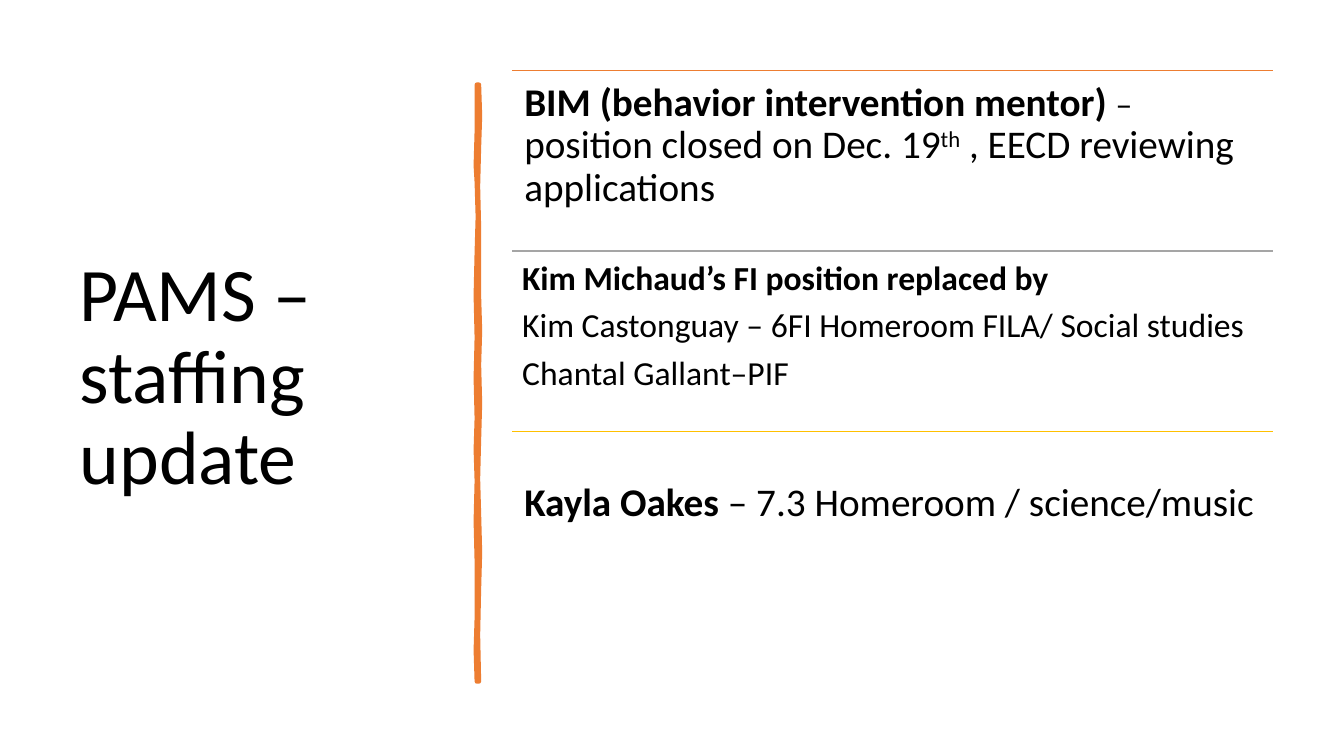
"""Build the PAMS staffing update slide."""
from dataclasses import dataclass

import lxml.etree
import pptx
import pptx.dml.color
import pptx.enum.shapes
import pptx.enum.text
import pptx.oxml.ns
import pptx.shapes.base
import pptx.slide
import pptx.text.text
import pptx.util

EMU_PER_PX = 9144
FONT = "Calibri"
BLACK = pptx.dml.color.RGBColor(0x00, 0x00, 0x00)
ORANGE = pptx.dml.color.RGBColor(0xED, 0x7D, 0x31)
GRAY = pptx.dml.color.RGBColor(0xA5, 0xA5, 0xA5)
GOLD = pptx.dml.color.RGBColor(0xFF, 0xC0, 0x00)

SECTION_LEFT, SECTION_TOP = 508, 70
SECTION_WIDTH, SECTION_HEIGHT = 755, 179

BRUSH_RIGHT = [
    (475, 84), (476, 115), (475, 146), (474, 185), (475, 226), (475, 260),
    (475, 294), (476, 328), (475, 362), (476, 400), (475, 436), (474, 475),
    (475, 510), (476, 548), (475, 584), (474, 630), (475, 676),
]
BRUSH_LEFT = [
    (473, 676), (472, 645), (473, 613), (473, 557), (472, 517), (473, 477),
    (472, 446), (473, 415), (472, 375), (473, 335), (472, 293), (473, 250),
    (474, 215), (473, 181), (472, 164), (473, 130), (473, 84),
]


@dataclass
class Segment:
    """A stretch of text in one style."""
    text: str
    size: int
    bold: bool = False
    superscript: bool = False


@dataclass
class Section:
    """A ruled block of staffing news."""
    rule_color: pptx.dml.color.RGBColor
    inset: int
    top_inset: int
    paragraphs: list[list[Segment]]


SECTIONS = [
    Section(ORANGE, 12, 12, [[
        Segment("BIM (behavior intervention mentor) ", 28, bold=True),
        Segment("– ", 24),
        Segment("position closed on Dec. 19", 28),
        Segment("th", 28, superscript=True),
        Segment(" , EECD reviewing applications", 28),
    ]]),
    Section(GRAY, 10, 10, [
        [Segment("Kim Michaud’s FI position replaced by", 24, bold=True)],
        [Segment("Kim Castonguay – 6FI Homeroom FILA/ Social studies", 24)],
        [Segment("Chantal Gallant–PIF", 24)],
    ]),
    Section(GOLD, 12, 71, [[
        Segment("Kayla Oakes ", 28, bold=True),
        Segment("– 7.3 Homeroom / science/music", 28),
    ]]),
]


def px(length: int) -> pptx.util.Emu:
    """Convert px to EMU."""
    return pptx.util.Emu(length * EMU_PER_PX)


def place(shape: pptx.shapes.base.BaseShape, left: int, top: int, width: int, height: int) -> None:
    """Set the position and size of a shape."""
    shape.left, shape.top = px(left), px(top)
    shape.width, shape.height = px(width), px(height)


def add_segment(paragraph: pptx.text.text._Paragraph, segment: Segment) -> None:
    """Append one styled run to a paragraph."""
    run = paragraph.add_run()
    run.text = segment.text
    run.font.name = FONT
    run.font.size = pptx.util.Pt(segment.size)
    run.font.bold = segment.bold
    run.font.color.rgb = BLACK
    if segment.superscript:
        run._r.get_or_add_rPr().set("baseline", "30000")


def add_title(slide: pptx.slide.Slide) -> None:
    """Fill the title placeholder."""
    title = slide.shapes.title
    place(title, 69, 70, 374, 611)
    frame = title.text_frame
    frame.word_wrap = True
    frame.auto_size = pptx.enum.text.MSO_AUTO_SIZE.NONE
    frame.vertical_anchor = pptx.enum.text.MSO_ANCHOR.MIDDLE
    paragraph = frame.paragraphs[0]
    paragraph.alignment = pptx.enum.text.PP_ALIGN.LEFT
    paragraph.line_spacing = 0.9
    add_segment(paragraph, Segment("PAMS – staffing update", 54))


def add_brush_line(slide: pptx.slide.Slide) -> None:
    """Draw the uneven vertical divider."""
    outline = BRUSH_RIGHT + BRUSH_LEFT
    builder = slide.shapes.build_freeform(*outline[0], scale=EMU_PER_PX)
    builder.add_line_segments(outline[1:], close=True)
    brush = builder.convert_to_shape()
    brush.shadow.inherit = False
    brush.fill.solid()
    brush.fill.fore_color.rgb = ORANGE
    brush.line.color.rgb = ORANGE
    brush.line.width = pptx.util.Pt(3.25)


def add_section(slide: pptx.slide.Slide, section: Section, top: int) -> None:
    """Draw the rule of a section and the text below it."""
    rule = slide.shapes.add_connector(
        pptx.enum.shapes.MSO_CONNECTOR.STRAIGHT,
        px(SECTION_LEFT), px(top), px(SECTION_LEFT + SECTION_WIDTH), px(top),
    )
    rule.line.color.rgb = section.rule_color
    rule.line.width = pptx.util.Pt(1)
    lxml.etree.SubElement(rule._element.spPr, pptx.oxml.ns.qn("a:effectLst"))

    box = slide.shapes.add_textbox(
        px(SECTION_LEFT), px(top), px(SECTION_WIDTH), px(SECTION_HEIGHT)
    )
    frame = box.text_frame
    frame.word_wrap = True
    frame.margin_left = frame.margin_right = frame.margin_bottom = px(section.inset)
    frame.margin_top = px(section.top_inset)
    for index, segments in enumerate(section.paragraphs):
        paragraph = frame.add_paragraph() if index else frame.paragraphs[0]
        paragraph.line_spacing = 0.9
        paragraph.space_after = pptx.util.Pt(8)
        for segment in segments:
            add_segment(paragraph, segment)


def main() -> None:
    """Build and save the presentation."""
    presentation = pptx.Presentation()
    presentation.slide_width = px(1333)
    presentation.slide_height = px(750)
    slide = presentation.slides.add_slide(presentation.slide_layouts[5])
    add_title(slide)
    add_brush_line(slide)
    for index, section in enumerate(SECTIONS):
        add_section(slide, section, SECTION_TOP + index * SECTION_HEIGHT)
    presentation.save("out.pptx")


if __name__ == "__main__":
    main()
